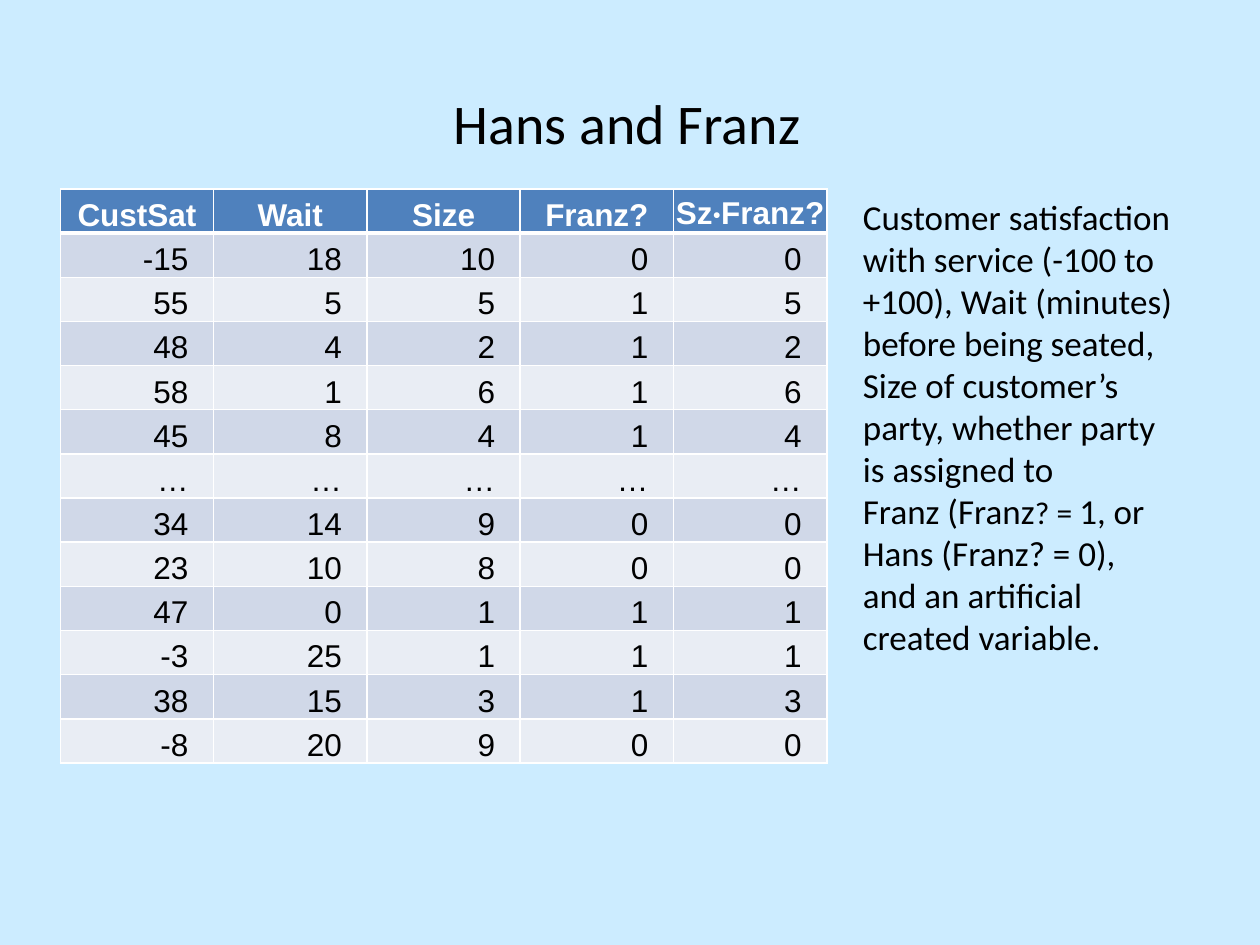
from dataclasses import dataclass

from lxml import etree
from pptx import Presentation
from pptx.dml.color import RGBColor
from pptx.enum.text import MSO_ANCHOR, MSO_AUTO_SIZE, PP_ALIGN
from pptx.oxml.ns import qn
from pptx.util import Pt

LEFT, MID, RIGHT = PP_ALIGN.LEFT, PP_ALIGN.CENTER, PP_ALIGN.RIGHT
TOP, CENTER, BASE = MSO_ANCHOR.TOP, MSO_ANCHOR.MIDDLE, MSO_ANCHOR.BOTTOM
FIT = MSO_AUTO_SIZE.SHAPE_TO_FIT_TEXT


@dataclass(frozen=True)
class Theme:
    page: str = "CCECFF"
    ink: str = "000000"
    white: str = "FFFFFF"
    head: str = "4F81BD"
    bands: tuple = ("D0D8E8", "E9EDF4")
    body: str = "Calibri"
    grid: str = "Arial"
    title: int = 32
    note: int = 20
    small: int = 18
    cell: int = 18


HEAD = ["CustSat", "Wait", "Size", "Franz?", ("Sz", "·", "Franz?")]
ROWS = [
    (-15, 18, 10, 0, 0),
    (55, 5, 5, 1, 5),
    (48, 4, 2, 1, 2),
    (58, 1, 6, 1, 6),
    (45, 8, 4, 1, 4),
    ("…",) * 5,
    (34, 14, 9, 0, 0),
    (23, 10, 8, 0, 0),
    (47, 0, 1, 1, 1),
    (-3, 25, 1, 1, 1),
    (38, 15, 3, 1, 3),
    (-8, 20, 9, 0, 0),
]


class Deck:
    def __init__(self, theme):
        self.theme = theme
        self.file = Presentation()
        self.file.slide_width, self.file.slide_height = Pt(720), Pt(540)
        self.slide = self.file.slides.add_slide(self.file.slide_layouts[6])
        fill = self.slide.background.fill
        fill.solid()
        fill.fore_color.rgb = RGBColor.from_string(theme.page)

    def font(self, para, name, size, color, bold=False):
        font = para.font
        font.name, font.size, font.bold = name, Pt(size), bold
        font.color.rgb = RGBColor.from_string(color)

    def text(self, box, paras, size, align=LEFT, anchor=TOP):
        """Add a text box; each paragraph is a list of (text, size or None)."""
        shape = self.slide.shapes.add_textbox(*map(Pt, box))
        frame = shape.text_frame
        frame.word_wrap, frame.vertical_anchor = True, anchor
        for i, runs in enumerate(paras):
            para = frame.add_paragraph() if i else frame.paragraphs[0]
            para.alignment = align
            self.font(para, self.theme.body, size, self.theme.ink)
            for words, own in runs:
                run = para.add_run()
                run.text = words
                if own:
                    run.font.size = Pt(own)
        return frame

    def edge(self, cell, side, width):
        props = cell._tc.get_or_add_tcPr()
        line = etree.SubElement(props, qn(f"a:ln{side}"), w=str(Pt(width)))
        fill = etree.SubElement(line, qn("a:solidFill"))
        etree.SubElement(fill, qn("a:srgbClr"), val=self.theme.white)

    def cell(self, cell, value, row):
        theme, head = self.theme, row == 0
        widths = {"L": 1, "R": 1, "T": 3 if row == 1 else 1, "B": 3 if head else 1}
        for side, width in widths.items():
            self.edge(cell, side, width)
        cell.fill.solid()
        shade = theme.head if head else theme.bands[(row - 1) % 2]
        cell.fill.fore_color.rgb = RGBColor.from_string(shade)
        cell.vertical_anchor = BASE
        cell.margin_left = cell.margin_top = Pt(0.75)
        cell.margin_right, cell.margin_bottom = Pt(0.75 if head else 14.4), Pt(0)
        para = cell.text_frame.paragraphs[0]
        para.alignment = MID if head else RIGHT
        self.font(para, theme.grid, theme.cell, theme.white if head else theme.ink, head)
        for part in value if isinstance(value, tuple) else (value,):
            run = para.add_run()
            run.text = str(part)
            if part == "·":
                run.font.name = theme.body

    def table(self, box, rows):
        frame = self.slide.shapes.add_table(len(rows), len(rows[0]), *map(Pt, box))
        table = frame.table
        for col in table.columns:
            col.width = Pt(box[2] / len(rows[0]))
        for r, row in enumerate(rows):
            table.rows[r].height = Pt(box[3] / len(rows))
            for c, value in enumerate(row):
                self.cell(table.cell(r, c), value, r)


def main():
    theme = Theme()
    deck = Deck(theme)
    deck.text((34.5, 42, 648, 56), [[("Hans and Franz", None)]], theme.title, MID, CENTER)
    note = [
        [("Customer satisfaction with service (-100 to +100), Wait (minutes) before "
          "being seated, Size of customer’s party, whether party is assigned to", None)],
        [("Franz (Franz", None), ("? = ", theme.small),
         ("1, or Hans (Franz? = 0), and an artificial created variable.", None)],
    ]
    deck.text((486, 108, 192, 298), note, theme.note).auto_size = FIT
    deck.table((34.5, 108, 438, 328.25), [HEAD, *ROWS])
    deck.file.save("out.pptx")


if __name__ == "__main__":
    main()
